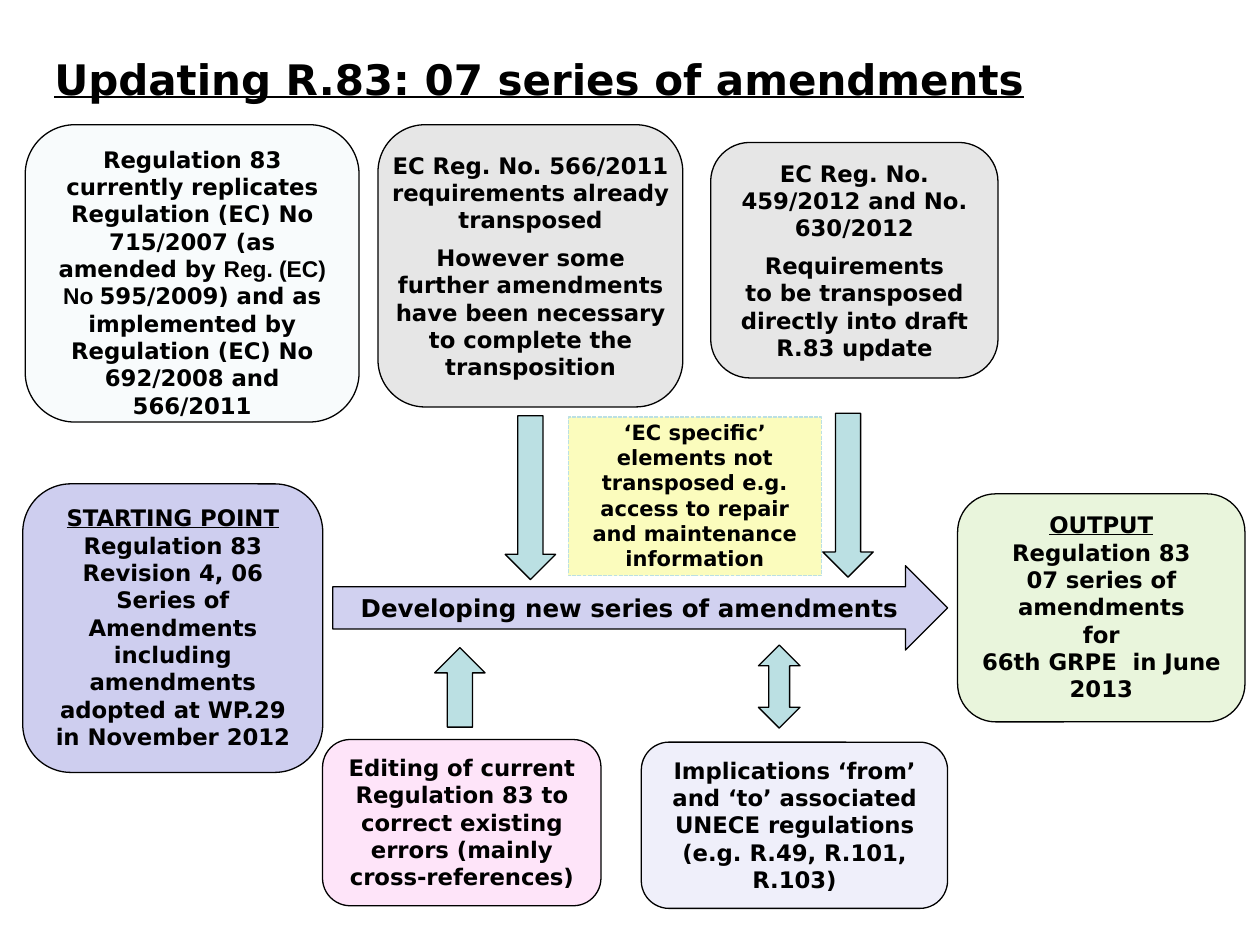
from dataclasses import dataclass
from typing import NamedTuple

from lxml import etree
from pptx import Presentation
from pptx.dml.color import RGBColor
from pptx.enum import dml, shapes, text
from pptx.oxml import ns
from pptx.util import Pt

KIND = shapes.MSO_SHAPE
TOP = text.MSO_ANCHOR.TOP
MIDDLE = text.MSO_ANCHOR.MIDDLE


@dataclass(frozen=True)
class Theme:
    font: str = "DejaVu Sans"
    alt: str = "Arial"
    ink: str = "000000"
    pale: str = "F8FBFC"
    lilac: str = "CECEEF"
    violet: str = "D1D1F0"
    green: str = "92D050"
    gray: str = "E6E6E6"
    teal: str = "BBE0E3"
    pink: str = "FEB0ED"
    yellow: str = "FAFCA2"
    head: float = 24
    band: float = 14
    body: float = 13
    note: float = 12
    rule: float = 0.75


THEME = Theme()


class Area(NamedTuple):
    left: float
    top: float
    width: float
    height: float


class Line(NamedTuple):
    text: str
    under: bool = False
    after: float = 0
    swap: str = ""


@dataclass(frozen=True)
class Box:
    area: Area
    fill: str
    lines: tuple[Line, ...] = ()
    kind: KIND = KIND.ROUNDED_RECTANGLE
    alpha: int = 100
    size: float = THEME.body
    anchor: text.MSO_ANCHOR = TOP
    inset: tuple[float, float] = (7.2, 3.6)
    edge: str = THEME.ink
    dashed: bool = False
    turn: float = 0


def place(shape, area: Area) -> None:
    shape.left, shape.top, shape.width, shape.height = map(Pt, area)


def style(font, size: float, under: bool, name: str) -> None:
    font.name = name
    font.size = Pt(size)
    font.bold = True
    font.underline = under
    font.color.rgb = RGBColor.from_string(THEME.ink)


def write(frame, box: Box) -> None:
    frame.word_wrap = True
    frame.auto_size = text.MSO_AUTO_SIZE.SHAPE_TO_FIT_TEXT
    frame.vertical_anchor = box.anchor
    frame.margin_left = frame.margin_right = Pt(box.inset[0])
    frame.margin_top = frame.margin_bottom = Pt(box.inset[1])
    frame.text = "\n".join(line.text for line in box.lines)
    for para, line in zip(frame.paragraphs, box.lines):
        para.alignment = text.PP_ALIGN.CENTER
        para.space_after = Pt(line.after)
        if line.swap:
            start, end = line.text.split(line.swap)
            para.runs[0].text = start
            para.add_run().text = line.swap
            para.add_run().text = end
        for run in para.runs:
            name = THEME.alt if run.text == line.swap else THEME.font
            style(run.font, box.size, line.under, name)


def draw(slide, box: Box) -> None:
    shape = slide.shapes.add_shape(box.kind, *map(Pt, box.area))
    shape.shadow.inherit = False
    shape.rotation = box.turn
    shape.fill.solid()
    shape.fill.fore_color.rgb = RGBColor.from_string(box.fill)
    if box.alpha < 100:
        color = shape.fill._xPr.find(".//" + ns.qn("a:srgbClr"))
        alpha = etree.SubElement(color, ns.qn("a:alpha"))
        alpha.set("val", str(box.alpha * 1000))
    shape.line.color.rgb = RGBColor.from_string(box.edge)
    shape.line.width = Pt(THEME.rule)
    if box.dashed:
        shape.line.dash_style = dml.MSO_LINE.SQUARE_DOT
    if box.lines:
        write(shape.text_frame, box)


def head(slide, words: str, area: Area) -> None:
    title = slide.shapes.title
    place(title, area)
    frame = title.text_frame
    frame.text = words
    frame.word_wrap = True
    frame.auto_size = text.MSO_AUTO_SIZE.NONE
    frame.vertical_anchor = MIDDLE
    para = frame.paragraphs[0]
    para.alignment = text.PP_ALIGN.LEFT
    style(para.runs[0].font, THEME.head, True, THEME.font)


BOXES = (
    Box(Area(14.4, 71.3, 190.8, 169.9), THEME.pale, (
        Line("Regulation 83 currently replicates Regulation (EC) No 715/2007 "
             "(as amended by Reg. (EC) No 595/2009) and as implemented by "
             "Regulation (EC) No 692/2008 and 566/2011", swap="Reg. (EC) No "),)),
    Box(Area(13, 276.5, 171.4, 164.9), THEME.lilac, (
        Line("STARTING POINT", under=True),
        Line("Regulation 83 Revision 4, 06 Series of Amendments including "
             "amendments adopted at WP.29 in November 2012"))),
    Box(Area(547.2, 282.2, 164.2, 130.3), THEME.green, (
        Line("OUTPUT", under=True),
        Line("Regulation 83"),
        Line("07 series of amendments"),
        Line("for"),
        Line("66th GRPE  in June 2013")), alpha=20),
    Box(Area(190.1, 323.3, 351.4, 48.2), THEME.violet, (
        Line("Developing new series of amendments"),),
        kind=KIND.RIGHT_ARROW, size=THEME.band),
    Box(Area(216, 71.3, 174.2, 161.3), THEME.gray, (
        Line("EC Reg. No. 566/2011"),
        Line("requirements already"),
        Line("transposed", after=6),
        Line("However some further amendments have been necessary to "
             "complete the transposition")), anchor=MIDDLE, inset=(0, 2.9)),
    Box(Area(406.1, 81.4, 164.2, 134.6), THEME.gray, (
        Line("EC Reg. No. 459/2012 and No. 630/2012", after=6),
        Line("Requirements"),
        Line("to be transposed directly into draft R.83 update")),
        anchor=MIDDLE),
    Box(Area(184.3, 422.6, 159.1, 95), THEME.pink, (
        Line("Editing of current Regulation 83 to correct existing errors "
             "(mainly cross-references)", after=6),), alpha=33),
    Box(Area(366.5, 424.1, 175, 95), THEME.violet, (
        Line("Implications ‘from’ and ‘to’ associated UNECE regulations "
             "(e.g. R.49, R.101, R.103)"),), alpha=33),
    Box(Area(324.7, 238.3, 144.7, 90.7), THEME.yellow, (
        Line("‘EC specific’ elements not transposed e.g. access to repair "
             "and maintenance information"),), kind=KIND.RECTANGLE, alpha=70,
        size=THEME.note, inset=(7.2, 1.4), edge=THEME.teal, dashed=True),
    Box(Area(288.7, 237.6, 28.8, 93.6), THEME.teal, kind=KIND.DOWN_ARROW),
    Box(Area(470.2, 236.2, 28.8, 93.6), THEME.teal, kind=KIND.DOWN_ARROW),
    Box(Area(248.4, 370.1, 28.8, 45.4), THEME.teal, kind=KIND.DOWN_ARROW, turn=180),
    Box(Area(433.4, 368.6, 23.8, 47.5), THEME.teal, kind=KIND.UP_DOWN_ARROW),
)


def main() -> None:
    deck = Presentation()
    deck.slide_width, deck.slide_height = Pt(720), Pt(540)
    slide = deck.slides.add_slide(deck.slide_layouts[5])
    head(slide, "Updating R.83: 07 series of amendments",
         Area(23.8, 8.6, 636.5, 72.7))
    for box in BOXES:
        draw(slide, box)
    deck.save("out.pptx")


if __name__ == "__main__":
    main()
